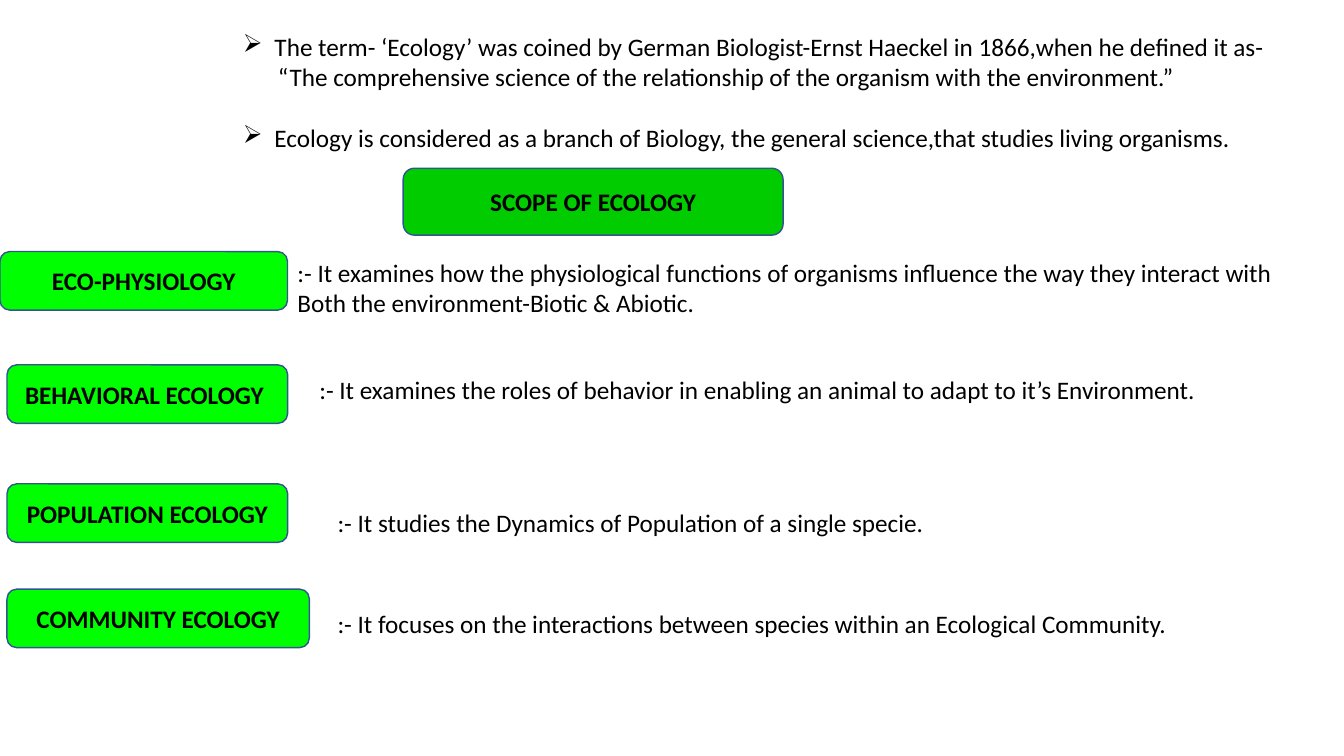
from dataclasses import dataclass
from lxml.etree import SubElement
from pptx import Presentation
from pptx.dml.color import RGBColor
from pptx.enum.shapes import MSO_SHAPE
from pptx.enum.text import MSO_ANCHOR, PP_ALIGN
from pptx.oxml.ns import qn
from pptx.util import Pt


@dataclass(frozen=True)
class Theme:
    font: str = "Calibri"
    size: int = 18
    text: RGBColor = RGBColor(0x00, 0x00, 0x00)
    heading: RGBColor = RGBColor(0x00, 0xCC, 0x00)
    branch: RGBColor = RGBColor(0x00, 0xFF, 0x00)
    outline: RGBColor = RGBColor(0x32, 0x54, 0x91)


theme = Theme()
LINE_HEIGHT = 22


def write(frame, lines, bold=False):
    frame.word_wrap = True
    for index, line in enumerate(lines):
        paragraph = frame.paragraphs[0] if index == 0 else frame.add_paragraph()
        paragraph.text = line
        for run in paragraph.runs:
            run.font.name = theme.font
            run.font.size = Pt(theme.size)
            run.font.color.rgb = theme.text
            run.font.bold = bold


def add_label(label, left, top, width, height, fill):
    box = slide.shapes.add_shape(
        MSO_SHAPE.ROUNDED_RECTANGLE, Pt(left), Pt(top), Pt(width), Pt(height))
    box.shadow.inherit = False
    box.fill.solid()
    box.fill.fore_color.rgb = fill
    box.line.color.rgb = theme.outline
    box.line.width = Pt(1)
    write(box.text_frame, [label], bold=True)
    box.text_frame.vertical_anchor = MSO_ANCHOR.MIDDLE
    box.text_frame.paragraphs[0].alignment = PP_ALIGN.CENTER


presentation = Presentation()
presentation.slide_width, presentation.slide_height = Pt(960), Pt(540)
slide = presentation.slides.add_slide(presentation.slide_layouts[6])

# Definition of ecology
definition = slide.shapes.add_textbox(Pt(166.5), Pt(18.9), Pt(764.5), Pt(102)).text_frame
write(definition, [
    "The term- ‘Ecology’ was coined by German Biologist-Ernst Haeckel in 1866,when he defined it as-",
    "“The comprehensive science of the relationship of the organism with the environment.”",
    "Ecology is considered as a branch of Biology, the general science,that studies living organisms.",
])
origin, quotation, discipline = definition.paragraphs
for point in (origin, discipline):
    properties = point._p.get_or_add_pPr()
    properties.set("marL", str(Pt(22.5)))
    properties.set("indent", str(-Pt(22.5)))
    SubElement(properties, qn("a:buChar")).set("char", "➢")
quotation._p.get_or_add_pPr().set("marL", str(Pt(25)))
discipline.space_before = Pt(LINE_HEIGHT)

# Heading
add_label("SCOPE OF ECOLOGY", 288, 120.2, 271.4, 47.8, theme.heading)

# Branches: label, its left, top and width, then the description's left, top, width and lines
branches = [
    ("ECO-PHYSIOLOGY", 0, 179.7, 205.4, 205.4, 180, 718,
     [":- It examines how the physiological functions of organisms influence the way they interact with",
      "Both the environment-Biotic & Abiotic."]),
    ("BEHAVIORAL ECOLOGY ", 5, 260.6, 200.5, 221, 264, 710,
     [":- It examines the roles of behavior in enabling an animal to adapt to it’s Environment."]),
    ("POPULATION ECOLOGY", 5, 345.6, 200.5, 234, 359, 672,
     [":- It studies the Dynamics of Population of a single specie."]),
    ("COMMUNITY ECOLOGY", 5, 420.8, 216, 234, 431.2, 697,
     [":- It focuses on the interactions between species within an Ecological Community."]),
]
for label, left, top, width, text_left, text_top, text_width, lines in branches:
    add_label(label, left, top, width, 41.8, theme.branch)
    description = slide.shapes.add_textbox(
        Pt(text_left), Pt(text_top), Pt(text_width), Pt(LINE_HEIGHT * len(lines) + 7.2))
    write(description.text_frame, lines)

presentation.save("out.pptx")
